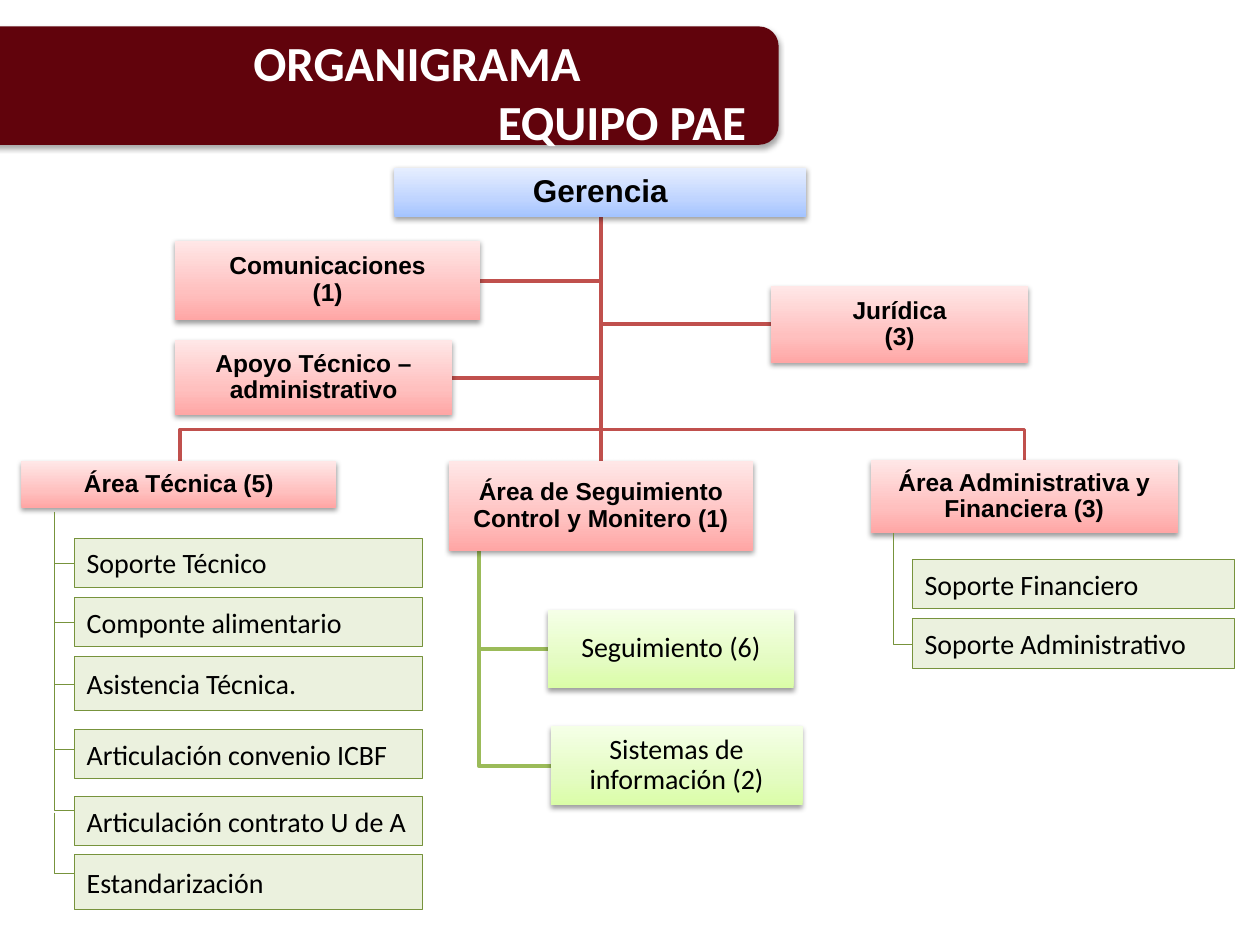
from lxml.etree import SubElement
from pptx import Presentation
from pptx.dml.color import RGBColor
from pptx.enum.shapes import MSO_CONNECTOR, MSO_SHAPE
from pptx.enum.text import MSO_ANCHOR, MSO_AUTO_SIZE, PP_ALIGN
from pptx.oxml import parse_xml
from pptx.oxml.ns import nsdecls, qn
from pptx.util import Inches, Pt

COLS, ROWS = 100, 75
CELL = Inches(10) / COLS

BLUE = ("A4C4FF", "BFD4FF", "E6EEFF")
RED = ("FFA6A5", "FFC0BF", "FFE7E7")
GREEN = ("DAFDA7", "E4FCC2", "F5FFE7")
RED_LINE, GREEN_LINE, OLIVE = "C0504D", "9BBB59", "77933C"

BOXES = [
    ("Gerencia", (31.3, 13.3, 32.7, 3.9), BLUE, 18),
    ("Área Técnica (5)", (1.7, 36.6, 25, 3.7), RED, 14),
    ("Área de Seguimiento\vControl y Monitero (1)", (35.6, 36.6, 24.2, 7.1), RED, 14),
    ("Área Administrativa y Financiera (3)", (69.1, 36.5, 24.4, 5.8), RED, 14),
    ("Comunicaciones\v(1)", (13.9, 19.1, 24.2, 6.3), RED, 14),
    ("Apoyo Técnico – administrativo", (13.9, 27, 22, 5.9), RED, 14),
    ("Jurídica\v(3)", (61.2, 22.7, 20.4, 6.1), RED, 14),
    ("Seguimiento (6)", (43.5, 48.4, 19.5, 6.2), GREEN, 16),
    ("Sistemas de información (2)", (43.7, 57.6, 20, 6.3), GREEN, 16),
]
TECHNICAL = [
    ("Soporte Técnico", 42.7, 3.9),
    ("Componte alimentario", 47.4, 3.9),
    ("Asistencia Técnica.", 52.1, 4.3),
    ("Articulación convenio ICBF", 57.9, 3.9),
    ("Articulación contrato U de A", 63.2, 3.9),
    ("Estandarización", 67.8, 4.4),
]
FINANCIAL = [("Soporte Financiero", 44.4, 3.9), ("Soporte Administrativo", 49.1, 3.9)]
TECHNICAL_LINKS = [(42.7, 44.7), (40.6, 49.4), (49.4, 54.3),
                   (54, 59.5), (59.5, 64.3), (64.5, 69.3)]


def color(value):
    return RGBColor.from_string(value)


def grid(*cells):
    return [round(n * CELL) for n in cells]


def format_text(p, size, font, value="000000", bold=False):
    for r in p.runs:
        r.font.size = Pt(size)
        r.font.name = font
        r.font.bold = bold
        r.font.color.rgb = color(value)


def add_shadow(sp, alpha, distance):
    sp.shadow.inherit = False
    effects = sp._element.spPr.find(qn("a:effectLst"))
    shadow = SubElement(effects, qn("a:outerShdw"), blurRad=str(Pt(3.1)),
                        dist=str(Pt(distance)), dir="5400000", rotWithShape="0")
    black = SubElement(shadow, qn("a:srgbClr"), val="000000")
    SubElement(black, qn("a:alpha"), val=str(alpha * 1000))


def fill_gradient(sp, colors):
    stops = "".join(
        f'<a:gs pos="{pos}"><a:srgbClr val="{value}"/></a:gs>'
        for pos, value in zip((0, 35000, 100000), colors))
    sp._element.spPr.find(qn("a:prstGeom")).addnext(parse_xml(
        f'<a:gradFill {nsdecls("a")} rotWithShape="1"><a:gsLst>{stops}</a:gsLst>'
        '<a:lin ang="16200000" scaled="0"/></a:gradFill>'))


def add_box(s, text, place, colors, size):
    sp = s.shapes.add_shape(MSO_SHAPE.RECTANGLE, *grid(*place))
    fill_gradient(sp, colors)
    sp.line.fill.background()
    add_shadow(sp, 38, 1.6)
    tf = sp.text_frame
    tf.margin_left = tf.margin_right = tf.margin_top = tf.margin_bottom = Inches(0.01)
    tf.vertical_anchor = MSO_ANCHOR.MIDDLE
    tf.text = text
    p = tf.paragraphs[0]
    p.alignment = PP_ALIGN.CENTER
    p.line_spacing = 0.9
    is_area = colors != GREEN
    format_text(p, size, "Arial" if is_area else "Calibri", bold=is_area)


def add_list(s, left, width, items):
    for text, top, height in items:
        sp = s.shapes.add_shape(MSO_SHAPE.RECTANGLE, *grid(left, top, width, height))
        sp.shadow.inherit = False
        sp.fill.solid()
        sp.fill.fore_color.rgb = color("EBF1DE")
        sp.line.color.rgb = color(OLIVE)
        sp.line.width = Pt(0.25)
        tf = sp.text_frame
        tf.vertical_anchor = MSO_ANCHOR.MIDDLE
        tf.text = text
        tf.paragraphs[0].alignment = PP_ALIGN.LEFT
        format_text(tf.paragraphs[0], 16, "Calibri")


def add_branch(s, value, start, *points):
    builder = s.shapes.build_freeform(*grid(*start))
    builder.add_line_segments([grid(*point) for point in points], close=False)
    sp = builder.convert_to_shape()
    sp.shadow.inherit = False
    sp.fill.background()
    sp.line.color.rgb = color(value)
    sp.line.width = Pt(2)


def add_elbow(s, left, right, top, bottom):
    run, drop = right - left, bottom - top
    x = (left + right - drop) / 2
    y = (top + bottom - run) / 2
    link = s.shapes.add_connector(MSO_CONNECTOR.ELBOW, *grid(x + drop, y, x, y + run))
    link.line.color.rgb = color(OLIVE)
    link.line.width = Pt(0.25)
    spPr = link._element.spPr
    spPr.find(qn("a:prstGeom")).set("prst", "bentConnector2")
    spPr.find(qn("a:xfrm")).set("rot", "16200000")
    SubElement(spPr, qn("a:effectLst"))


def add_title(s):
    banner = s.shapes.add_shape(MSO_SHAPE.ROUNDED_RECTANGLE, *grid(-2, 2.1, 63.8, 9.4))
    banner.fill.solid()
    banner.fill.fore_color.rgb = color("61030C")
    banner.line.fill.background()
    add_shadow(banner, 35, 1.8)
    title = s.shapes.title
    title.left, title.top, title.width, title.height = grid(11.4, 2.1, 48.8, 10.4)
    title._element.addprevious(banner._element)
    tf = title.text_frame
    tf.auto_size = MSO_AUTO_SIZE.NONE
    tf.vertical_anchor = MSO_ANCHOR.TOP
    tf.text = "ORGANIGRAMA\nEQUIPO PAE"
    first, second = tf.paragraphs
    first.alignment, second.alignment = PP_ALIGN.LEFT, PP_ALIGN.RIGHT
    first._p.get_or_add_pPr().set("marL", str(Inches(0.77)))
    for p in tf.paragraphs:
        p.space_before = Pt(0)
        format_text(p, 28, "Calibri", "FFFFFF", True)


def add_branches(s):
    trunk, rail = 47.7, 34.1
    root = (trunk, 17.2)
    for x, y in [(61.2, 25.7), (35.9, 30), (38.1, 22.3)]:
        add_branch(s, RED_LINE, root, (trunk, y), (x, y))
    for x, y in [(81.3, 36.5), (trunk, 36.6), (14.3, 36.6)]:
        add_branch(s, RED_LINE, root, (trunk, rail), (x, rail), (x, y))
    for x, y in [(43.7, 60.8), (43.5, 51.5)]:
        add_branch(s, GREEN_LINE, (38, 43.7), (38, y), (x, y))


def main():
    prs = Presentation()
    prs.slide_width, prs.slide_height = grid(COLS, ROWS)
    s = prs.slides.add_slide(prs.slide_layouts[5])
    add_branches(s)
    for box in BOXES:
        add_box(s, *box)
    add_title(s)
    add_list(s, 5.9, 27.6, TECHNICAL)
    for top, bottom in TECHNICAL_LINKS:
        add_elbow(s, 4.3, 5.9, top, bottom)
    add_list(s, 72.4, 25.6, FINANCIAL)
    add_elbow(s, 70.9, 72.4, 42.3, 51.1)
    prs.save("out.pptx")


if __name__ == "__main__":
    main()
